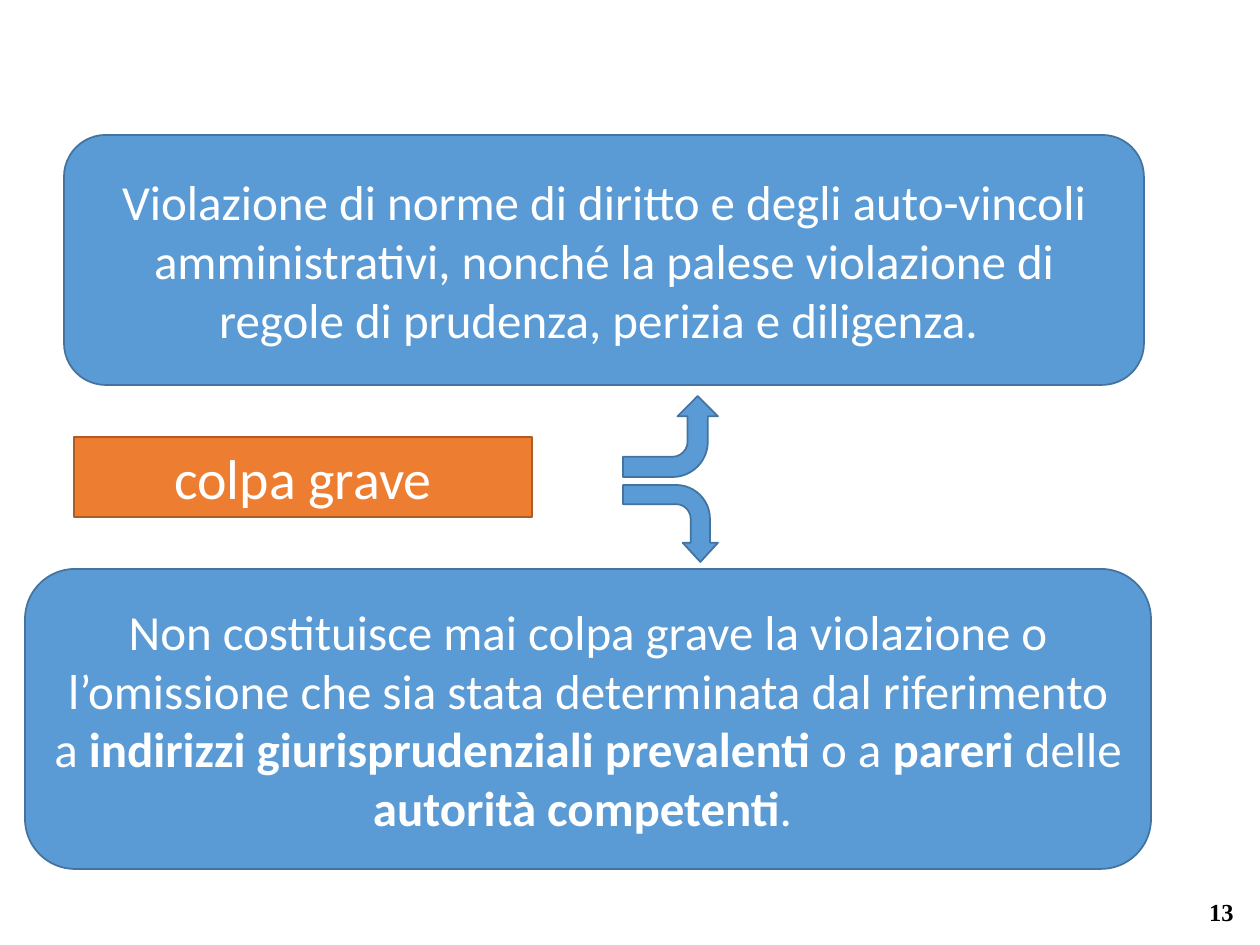
"""Build a slide that sets out what does and does not count as gross negligence."""
from pptx import Presentation
from pptx import util as u
from pptx.dml.color import RGBColor
from pptx.enum import shapes, text

PX_PER_INCH = 126
BLUE = RGBColor(0x5B, 0x9B, 0xD5)
BLUE_LINE = RGBColor(0x43, 0x73, 0x9E)
ORANGE = RGBColor(0xED, 0x7D, 0x31)
ORANGE_LINE = RGBColor(0xAF, 0x5C, 0x24)
WHITE = RGBColor(0xFF, 0xFF, 0xFF)
BLACK = RGBColor(0x00, 0x00, 0x00)

VIOLATION = [
    ("Violazione di norme di diritto e degli auto-vincoli amministrativi, "
     "nonché la palese violazione di regole di prudenza, perizia e diligenza. ", False),
]
EXCLUSION = [
    ("Non costituisce mai colpa grave la violazione o l’omissione che sia stata "
     "determinata dal riferimento a ", False),
    ("indirizzi giurisprudenziali prevalenti ", True),
    ("o a ", False),
    ("pareri", True),
    (" delle ", False),
    ("autorità competenti", True),
    (". ", False),
]


def px(length):
    return u.Emu(round(length * u.Inches(1) / PX_PER_INCH))


def write_text(shape, runs, size=28, font="Calibri", color=WHITE,
               align=text.PP_ALIGN.CENTER, anchor=text.MSO_ANCHOR.MIDDLE):
    frame = shape.text_frame
    frame.word_wrap = True
    frame.vertical_anchor = anchor
    paragraph = frame.paragraphs[0]
    paragraph.alignment = align
    for wording, bold in runs:
        run = paragraph.add_run()
        run.text = wording
        run.font.size = u.Pt(size)
        run.font.name = font
        run.font.bold = bold
        run.font.color.rgb = color


def add_shape(slide, kind, box, fill=BLUE, line=BLUE_LINE):
    shape = slide.shapes.add_shape(kind, *map(px, box))
    shape.shadow.inherit = False
    shape.fill.solid()
    shape.fill.fore_color.rgb = fill
    shape.line.color.rgb = line
    shape.line.width = u.Pt(1)
    return shape


def add_bent_arrow(slide, box, adjustments=(), upward=False):
    arrow = add_shape(slide, shapes.MSO_SHAPE.BENT_ARROW, box)
    arrow.rotation = 90
    for index, value in enumerate(adjustments):
        arrow.adjustments[index] = value
    if upward:
        arrow._element.spPr.xfrm.set("flipH", "1")


def main():
    presentation = Presentation()
    presentation.slide_width = px(1260)
    presentation.slide_height = px(945)
    slide = presentation.slides.add_slide(presentation.slide_layouts[6])

    number = slide.shapes.add_textbox(*map(px, (963, 887, 283, 50)))
    write_text(number, [("13", True)], size=14, font="Times New Roman",
               color=BLACK, align=text.PP_ALIGN.RIGHT)

    rounded = shapes.MSO_SHAPE.ROUNDED_RECTANGLE
    write_text(add_shape(slide, rounded, (64, 135, 1080, 250)), VIOLATION)
    label = add_shape(slide, shapes.MSO_SHAPE.RECTANGLE, (74, 437, 458, 80),
                      fill=ORANGE, line=ORANGE_LINE)
    write_text(label, [("colpa grave", False)], size=32, anchor=text.MSO_ANCHOR.TOP)
    write_text(add_shape(slide, rounded, (25, 569, 1126, 300)), EXCLUSION)

    add_bent_arrow(slide, (632, 476, 77, 95), adjustments=(0.25, 0.23, 0.25, 0.44))
    add_bent_arrow(slide, (630, 389, 81, 95), upward=True)

    presentation.save("out.pptx")


if __name__ == "__main__":
    main()
